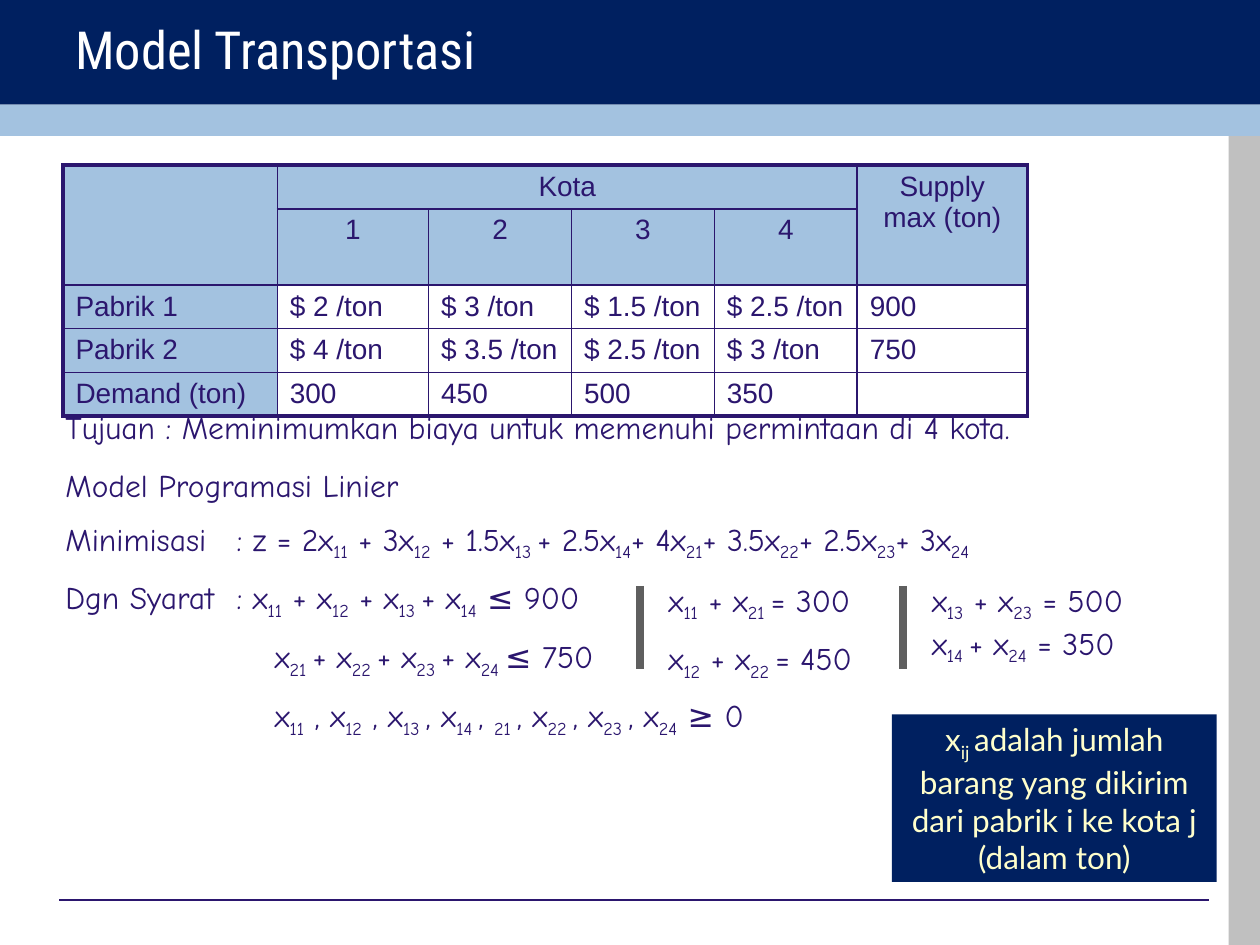
from lxml import etree
from pptx import Presentation, util as u
from pptx.dml.color import RGBColor
from pptx.enum import shapes, text
from pptx.oxml.ns import qn

NAVY = RGBColor(0x00, 0x20, 0x60)
SKY = RGBColor(0xA3, 0xC2, 0xE0)
SILVER = RGBColor(0xC0, 0xC0, 0xC0)
GRAY = RGBColor(0x5F, 0x5F, 0x5F)
INDIGO = RGBColor(0x2B, 0x16, 0x6E)
CREAM = RGBColor(0xFF, 0xFF, 0xCC)
WHITE = RGBColor(0xFF, 0xFF, 0xFF)

COLUMN_WIDTHS = [4.32, 3.05, 2.88, 2.88, 2.88, 3.43]
ROW_HEIGHTS = [0.88, 1.5, 0.88, 0.88, 0.88]
COSTS = [
    ["", "Kota", "", "", "", "Supply max (ton)"],
    ["", "1", "2", "3", "4", ""],
    ["Pabrik 1", "$ 2 /ton", "$ 3 /ton", "$ 1.5 /ton", "$ 2.5 /ton", "900"],
    ["Pabrik 2", "$ 4 /ton", "$ 3.5 /ton", "$ 2.5 /ton", "$ 3 /ton", "750"],
    ["Demand (ton)", "300", "450", "500", "350", ""],
]
OBJECTIVE = [
    "Model Programasi Linier",
    "Minimisasi\t: z = 2x[11] + 3x[12] + 1.5x[13 ]+ 2.5x[14]+ 4x[21]+ 3.5x[22]+ 2.5x[23]+ 3x[24]",
    "Dgn Syarat\t: x[11] + x[12] + x[13 ]+ x[14] ≤ 900",
]
CONSTRAINTS = [
    "x[21 ]+ x[22 ]+ x[23 ]+ x[24 ]≤ 750",
    "x[11] , x[12] , x[13 ], x[14 ], [21 ], x[22 ], x[23 ], x[24] ≥ 0",
]


def write_text(paragraph, content, font="Comic Neue", size=18, color=INDIGO,
               align=None, before=0, indent=0, hanging=0):
    """Fill a paragraph, lowering whatever stands in square brackets."""
    paragraph.alignment = align
    paragraph.space_before = u.Pt(before)
    properties = paragraph._p.get_or_add_pPr()
    properties.set("marL", str(u.Cm(indent)))
    properties.set("indent", str(-u.Cm(hanging)))
    for index, part in enumerate(content.replace("]", "[").split("[")):
        if part:
            run = paragraph.add_run()
            run.text = part
            run.font.name, run.font.size = font, u.Pt(size)
            run.font.color.rgb = color
            if index % 2:
                run.font._element.set("baseline", "-25000")
    ending = etree.SubElement(paragraph._p, qn("a:endParaRPr"), sz=str(size * 100))
    etree.SubElement(ending, qn("a:latin"), typeface=font)


def add_text(slide, left, top, width, height, lines, wrap=True,
             anchor=text.MSO_ANCHOR.TOP, **formats):
    """Add a text box with one paragraph for each line."""
    shape = slide.shapes.add_textbox(*map(u.Cm, (left, top, width, height)))
    frame = shape.text_frame
    frame.word_wrap, frame.vertical_anchor = wrap, anchor
    for index, line in enumerate(lines):
        paragraph = frame.add_paragraph() if index else frame.paragraphs[0]
        write_text(paragraph, line, **formats)
    return frame


def add_block(slide, left, top, width, height, color):
    """Add a plain filled rectangle."""
    shape = slide.shapes.add_shape(shapes.MSO_SHAPE.RECTANGLE,
                                   *map(u.Cm, (left, top, width, height)))
    shape.shadow.inherit = False
    shape.fill.solid()
    shape.fill.fore_color.rgb = color
    shape.line.fill.background()
    return shape


def add_line(slide, x1, y1, x2, y2, color, weight):
    """Add a straight line without a shadow."""
    line = slide.shapes.add_connector(shapes.MSO_CONNECTOR.STRAIGHT,
                                      *map(u.Cm, (x1, y1, x2, y2)))
    line.line.color.rgb, line.line.width = color, u.Pt(weight)
    etree.SubElement(line._element.spPr, qn("a:effectLst"))


def add_frame(slide, width, height):
    """Draw the title band, side bar and footer rule."""
    band, strip, bar = 2.11, 0.63, 0.63
    add_block(slide, width - bar, band + strip, bar, height - band - strip, SILVER)
    add_line(slide, 1.19, height - 0.91, width - 1.02, height - 0.91, INDIGO, 0.75)
    add_block(slide, 0, 0, width, band, NAVY)
    add_block(slide, 0, band, width, strip, SKY)
    add_text(slide, 1.27, 0.2, 17.15, 1.57, ["Model Transportasi"],
             anchor=text.MSO_ANCHOR.MIDDLE, font="Roboto Condensed", size=30, color=WHITE)


def set_borders(cell, weights):
    """Draw the cell borders, given as weights by side."""
    properties = cell._tc.get_or_add_tcPr()
    for side, weight in weights.items():
        line = etree.SubElement(properties, qn(f"a:ln{side}"), w=str(u.Pt(weight)))
        fill = etree.SubElement(line, qn("a:solidFill"))
        etree.SubElement(fill, qn("a:srgbClr"), val=str(INDIGO))


def add_cost_table(slide, left, top):
    """Add the table of costs, supply and demand."""
    last_row, last_column = len(ROW_HEIGHTS) - 1, len(COLUMN_WIDTHS) - 1
    table = slide.shapes.add_table(
        last_row + 1, last_column + 1, u.Cm(left), u.Cm(top),
        u.Cm(sum(COLUMN_WIDTHS)), u.Cm(sum(ROW_HEIGHTS))).table
    table.first_row = table.horz_banding = False
    for column, width in zip(table.columns, COLUMN_WIDTHS):
        column.width = u.Cm(width)
    for r, (height, values) in enumerate(zip(ROW_HEIGHTS, COSTS)):
        table.rows[r].height = u.Cm(height)
        for c, value in enumerate(values):
            cell = table.cell(r, c)
            cell.margin_top, cell.margin_bottom = u.Cm(0.12), u.Cm(0.06)
            edges = {"L": c == 0, "R": c == last_column, "T": r == 0, "B": r == last_row}
            set_borders(cell, {side: 2.25 if outer else 1 for side, outer in edges.items()})
            if r < 2 or c == 0:
                cell.fill.solid()
                cell.fill.fore_color.rgb = SKY
            else:
                cell.fill.background()
            write_text(cell.text_frame.paragraphs[0], value, font="Arial", size=16,
                       align=text.PP_ALIGN.CENTER if r < 2 else text.PP_ALIGN.LEFT)
    for first, final in [((0, 0), (1, 0)), ((0, 1), (0, 4)), ((0, 5), (1, 5))]:
        table.cell(*first).merge(table.cell(*final))


def add_model(slide, left, top, width):
    """Write the goal, the objective and the supply constraints."""
    add_text(slide, left, top, width, 1.78,
             ["Tujuan : Meminimumkan biaya untuk memenuhi permintaan di 4 kota."],
             align=text.PP_ALIGN.JUSTIFY)
    frame = add_text(slide, left, top + 1.17, width, 5.61, OBJECTIVE,
                     before=9, indent=3.45, hanging=3.45)
    for line in CONSTRAINTS:
        write_text(frame.add_paragraph(), line, before=9, indent=4.22)


def add_demand(slide, left, top, width, lines, before):
    """Write demand constraints to the right of a vertical bar."""
    add_line(slide, left, top + 0.23, left, top + 1.9, GRAY, 4.5)
    add_text(slide, left + 0.33, top, width, 1.78, lines, wrap=False, before=before)


def add_note(slide, left, top, width, height):
    """Add the dark box that explains the variable."""
    frame = add_block(slide, left, top, width, height, NAVY).text_frame
    frame.word_wrap, frame.vertical_anchor = True, text.MSO_ANCHOR.MIDDLE
    write_text(frame.paragraphs[0],
               "x[ij ]adalah jumlah barang yang dikirim dari pabrik i ke kota j (dalam ton)",
               font="Lato", color=CREAM, align=text.PP_ALIGN.CENTER)


def main():
    """Build the slide and save it."""
    presentation = Presentation()
    width, height = 25.4, 19.05
    presentation.slide_width, presentation.slide_height = u.Cm(width), u.Cm(height)
    slide = presentation.slides.add_slide(presentation.slide_layouts[6])
    add_frame(slide, width, height)
    add_cost_table(slide, 1.27, 3.33)
    add_model(slide, 1.07, 8.1, 24.3)
    add_demand(slide, 12.9, 11.58, 4.72, ["x[11] + x[21 ]= 300", "x[12] + x[22 ]= 450"], 9)
    add_note(slide, 17.98, 14.4, 6.55, 3.38)
    add_demand(slide, 18.21, 11.58, 4.78, ["x[13] + x[23] = 500", "x[14 ]+ x[24] = 350"], 0)
    presentation.save("out.pptx")


if __name__ == "__main__":
    main()
